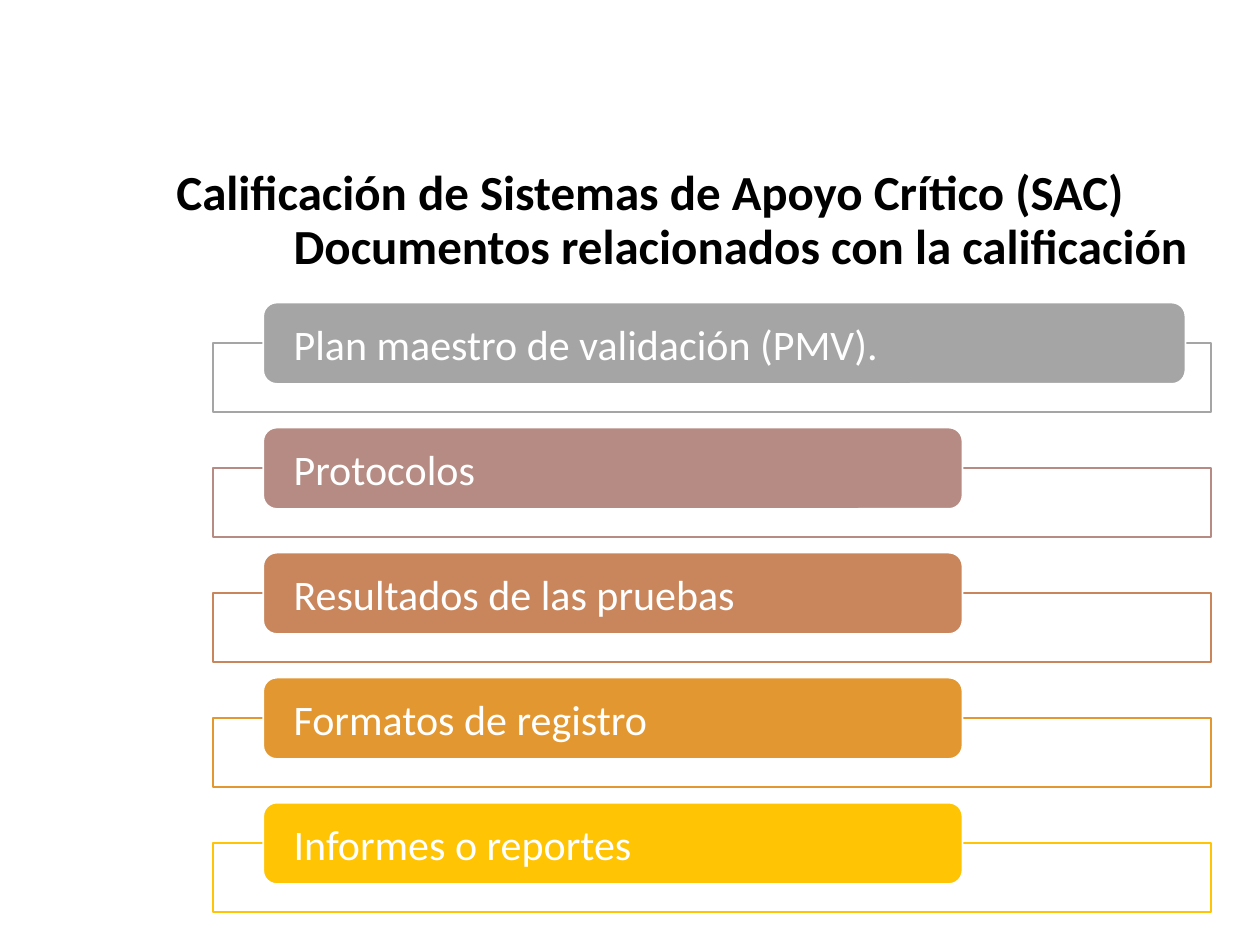
from pptx import Presentation
from pptx.dml.color import RGBColor
from pptx.enum.shapes import MSO_SHAPE
from pptx.enum.text import MSO_ANCHOR, MSO_AUTO_SIZE, PP_ALIGN
from pptx.oxml.ns import qn
from pptx.util import Pt
from lxml import etree

RECTANGLE = MSO_SHAPE.RECTANGLE
ROUNDED = MSO_SHAPE.ROUNDED_RECTANGLE
TOP, MIDDLE = MSO_ANCHOR.TOP, MSO_ANCHOR.MIDDLE
LEFT = PP_ALIGN.LEFT
GROW = MSO_AUTO_SIZE.SHAPE_TO_FIT_TEXT
NO_FIT = MSO_AUTO_SIZE.NONE

FONT = "Calibri"
TITLE_ONLY = 5
COLORS = {
    "ink": "000000",
    "white": "FFFFFF",
    "gray": "A5A5A5",
    "rose": "B58B83",
    "copper": "C9865C",
    "orange": "E29731",
    "yellow": "FFC403",
}
DOCUMENTS = [
    ("Plan maestro de validación (PMV).", "gray", 527),
    ("Protocolos", "rose", 399.6),
    ("Resultados de las pruebas", "copper", 399.6),
    ("Formatos de registro", "orange", 399.6),
    ("Informes o reportes", "yellow", 399.6),
]


def color(name):
    """Return the named colour."""
    return RGBColor.from_string(COLORS[name])


def place(shape, left, top, width, height):
    """Move and size a shape, in points."""
    shape.left, shape.top = Pt(left), Pt(top)
    shape.width, shape.height = Pt(width), Pt(height)


def write(shape, text, size, ink, insets, anchor=MIDDLE, bold=False, wrap=True, fit=NO_FIT):
    """Write one left-aligned run into a shape."""
    frame = shape.text_frame
    frame.word_wrap = wrap
    frame.auto_size = fit
    frame.vertical_anchor = anchor
    frame.margin_left, frame.margin_top, frame.margin_right, frame.margin_bottom = map(Pt, insets)
    para = frame.paragraphs[0]
    para.alignment = LEFT
    span = para.add_run()
    span.text = text
    span.font.name = FONT
    span.font.size = Pt(size)
    span.font.bold = bold
    span.font.color.rgb = color(ink)


def add_block(page, kind, box, fill, line):
    """Add a filled, outlined shape without a shadow."""
    shape = page.shapes.add_shape(kind, *map(Pt, box))
    shape.shadow.inherit = False
    shape.fill.solid()
    shape.fill.fore_color.rgb = color(fill)
    shape.line.color.rgb = color(line)
    shape.line.width = Pt(1)
    return shape


def add_heading(page, left, top):
    """Place the title and the subtitle below it."""
    title = page.shapes.title
    place(title, left, top, 556.6, 41)
    write(title, "Calificación de Sistemas de Apoyo Crítico (SAC)", 28, "ink",
          (7.2, 3.6, 7.2, 3.6), TOP, True, False, GROW)
    subtitle = page.shapes.add_textbox(Pt(left + 45.4), Pt(top + 22.3), Pt(551.5), Pt(51.8))
    write(subtitle, "Documentos relacionados con la calificación", 28, "ink",
          (28.8, 12.2, 7.2, 5.8), bold=True, fit=GROW)


def add_document(page, left, top, width, label, accent, tab_width):
    """Draw an outlined frame with its label tab over the upper edge."""
    frame = add_block(page, RECTANGLE, (left, top + 23, width, 39.6), "white", accent)
    tint = frame.fill._xPr.find(qn("a:solidFill"))[0]
    etree.SubElement(tint, qn("a:alpha"), val="90000")
    tab = add_block(page, ROUNDED, (left + 28.7, top, tab_width, 46.5), accent, "white")
    write(tab, label, 24, "white", (15.1, 0, 15.1, 0))


def add_document_list(page, left, top, width, pitch):
    """Stack the documents at an equal pitch."""
    for row, document in enumerate(DOCUMENTS):
        add_document(page, left, top + row * pitch, width, *document)


def main():
    """Build and save the deck."""
    deck = Presentation()
    deck.slide_width, deck.slide_height = Pt(720), Pt(540)
    page = deck.slides.add_slide(deck.slide_layouts[TITLE_ONLY])
    add_heading(page, 93.6, 88.6)
    add_document_list(page, 121.7, 172.9, 570.5, 71.45)
    deck.save("out.pptx")


if __name__ == "__main__":
    main()
